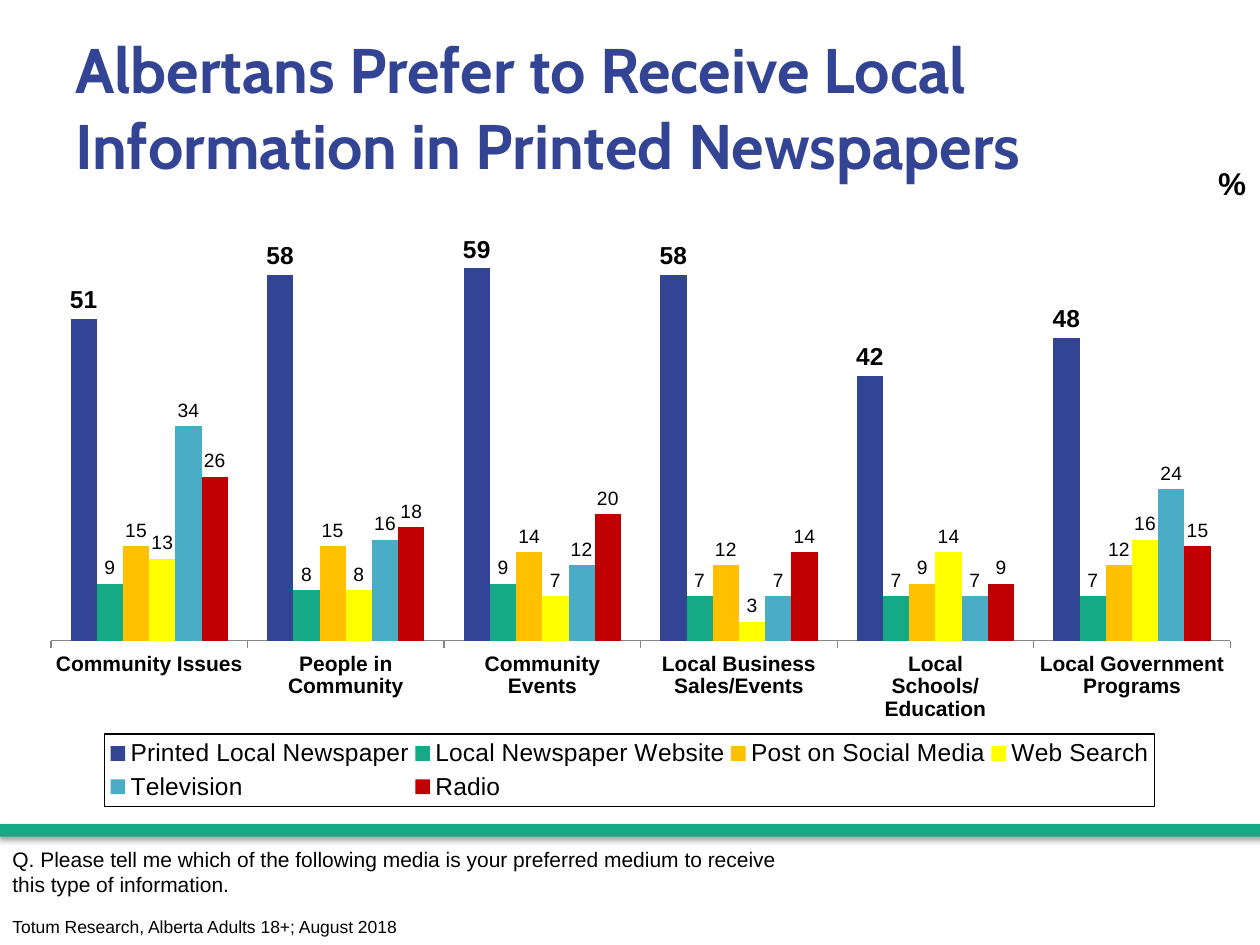
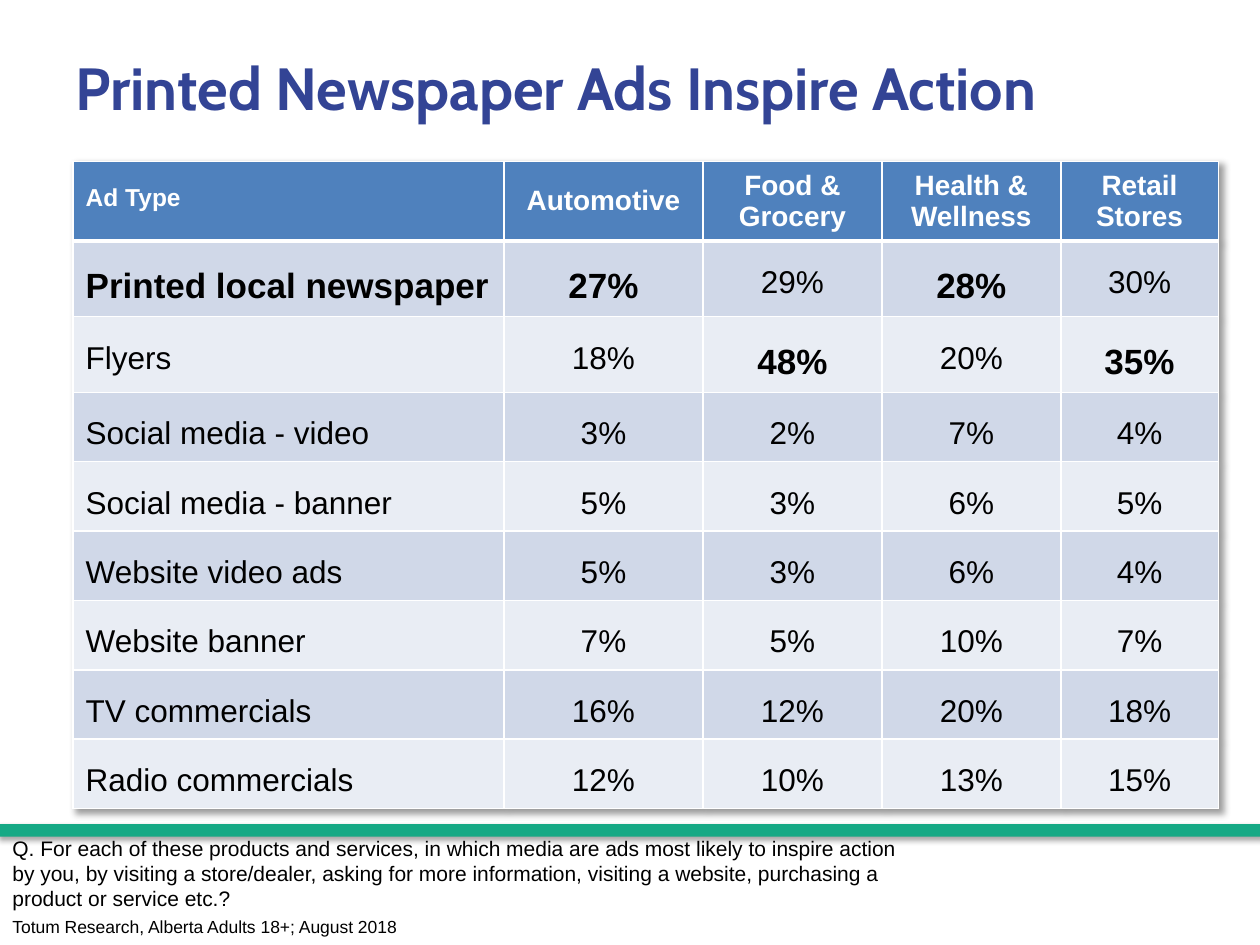
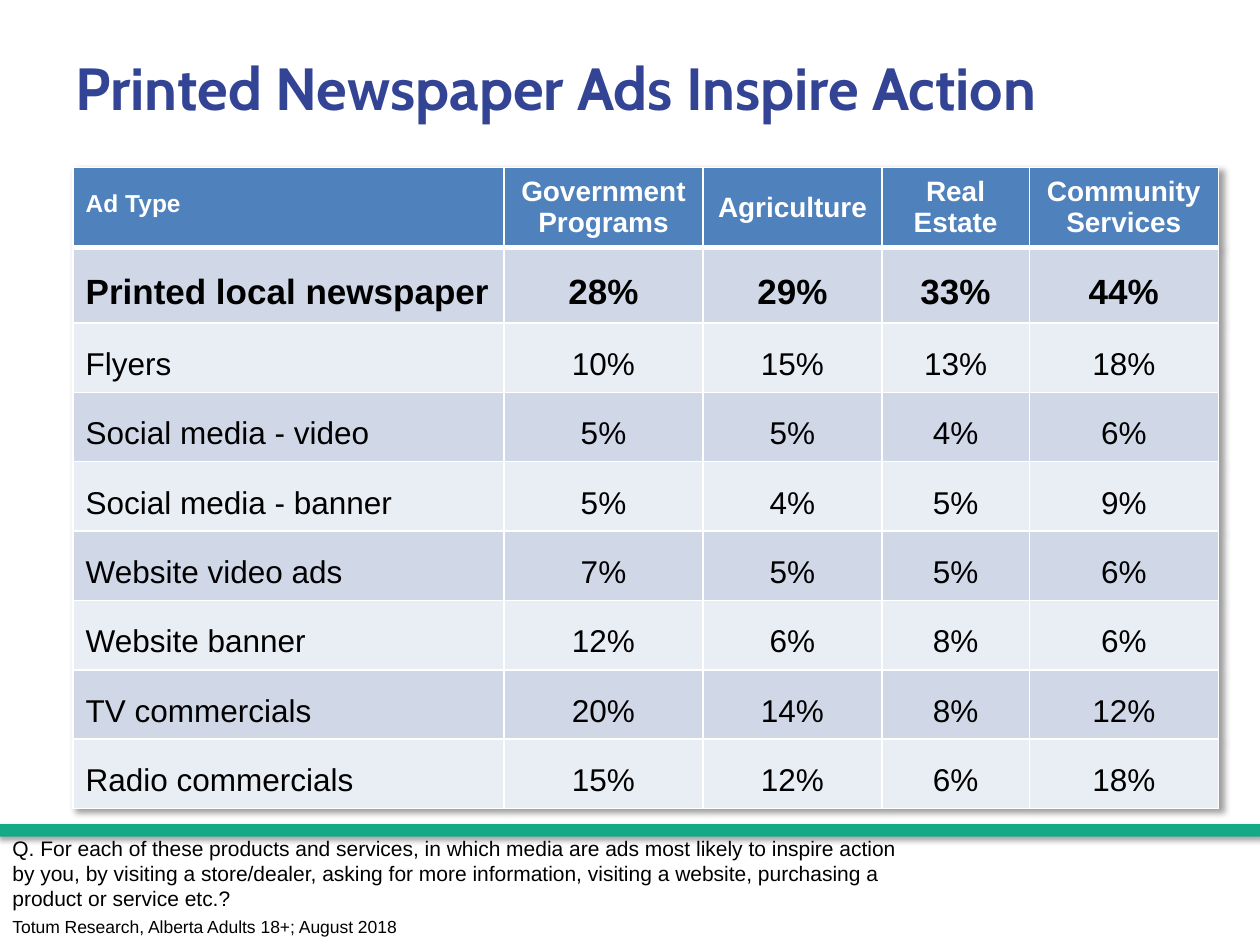
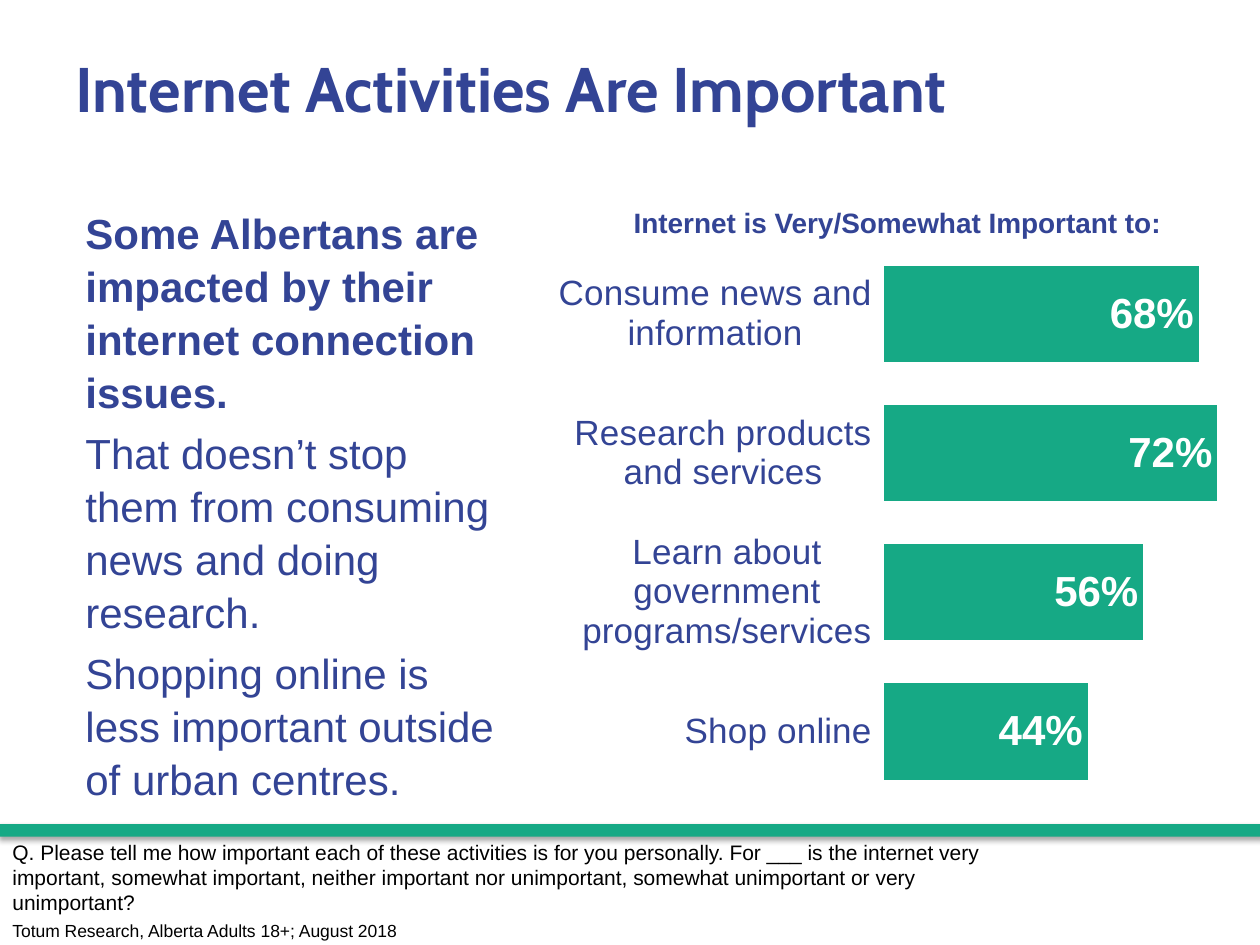
from dataclasses import dataclass

from pptx import Presentation
from pptx.chart.data import CategoryChartData
from pptx.dml.color import RGBColor
from pptx.enum.chart import XL_CHART_TYPE, XL_LABEL_POSITION, XL_LEGEND_POSITION, XL_TICK_MARK
from pptx.enum.shapes import MSO_SHAPE
from pptx.enum.text import MSO_ANCHOR, PP_ALIGN
from pptx.oxml import parse_xml
from pptx.oxml.ns import nsdecls, qn
from pptx.util import Inches, Pt


@dataclass(frozen=True)
class Theme:
    navy = RGBColor.from_string("334495")
    green = RGBColor.from_string("16A985")
    amber = RGBColor.from_string("FFC000")
    yellow = RGBColor.from_string("FFFF00")
    aqua = RGBColor.from_string("4BACC6")
    red = RGBColor.from_string("C00000")
    black = RGBColor.from_string("000000")
    white = RGBColor.from_string("FFFFFF")
    axis = RGBColor.from_string("868686")
    header = RGBColor.from_string("4F81BD")
    bands = (RGBColor.from_string("D0D8E8"), RGBColor.from_string("E9EDF4"))
    title_font = "Cabin"
    font = "Arial"
    question = 12
    source = 10
    cell = 18
    cell_top = 20
    cell_header = 16
    body = 24


T = Theme()

SHADOW = """<a:effectLst %s><a:outerShdw blurRad="{blur}" dist="{dist}" dir="{angle}" rotWithShape="0">
<a:srgbClr val="000000"><a:alpha val="{alpha}"/></a:srgbClr></a:outerShdw></a:effectLst>""" % nsdecls("a")
BORDER = """<a:{side} %s w="{width}"><a:solidFill><a:srgbClr val="FFFFFF"/></a:solidFill></a:{side}>""" % nsdecls("a")
LAYOUT = """<c:layout %s><c:manualLayout>{target}<c:xMode val="edge"/><c:yMode val="edge"/>
<c:x val="{x}"/><c:y val="{y}"/><c:w val="{w}"/><c:h val="{h}"/></c:manualLayout></c:layout>""" % nsdecls("c")
NO_FILL = "<c:spPr %s><a:noFill/><a:ln><a:noFill/></a:ln></c:spPr>" % nsdecls("c", "a")


def add_text(slide, box, lines, size, color=T.black, font=T.font, bold=False, wrap=True):
    tf = slide.shapes.add_textbox(*map(Inches, box)).text_frame
    tf.word_wrap = wrap
    tf.text = "\n".join(lines)
    for p in tf.paragraphs:
        for r in p.runs:
            r.font.size, r.font.name, r.font.bold = Pt(size), font, bold
            r.font.color.rgb = color
    return tf


def add_chart(slide, kind, box, data, inner, gap, top):
    """Add a chart with a hidden value axis from 0 to top; inner is the plot area as fractions."""
    chart = slide.shapes.add_chart(kind, *map(Inches, box), data).chart
    chart.has_title = chart.has_legend = False
    chart.font.size, chart.font.name = Pt(18), T.font
    chart.font.color.rgb = T.black
    chart._chartSpace.find(qn("c:chart")).addnext(parse_xml(NO_FILL))
    plot_area = chart._chartSpace.chart.plotArea
    for old in plot_area.findall(qn("c:layout")):
        plot_area.remove(old)
    x, y, w, h = inner
    target = '<c:layoutTarget val="inner"/>'
    plot_area.insert(0, parse_xml(LAYOUT.format(target=target, x=x, y=y, w=w, h=h)))
    chart.plots[0].gap_width = gap
    chart.plots[0].vary_by_categories = False
    chart.value_axis.minimum_scale, chart.value_axis.maximum_scale = 0, top
    chart.value_axis.has_major_gridlines = False
    chart.value_axis.visible = False
    chart.category_axis.major_tick_mark = XL_TICK_MARK.OUTSIDE
    return chart


prs = Presentation()
prs.slide_width, prs.slide_height = Inches(10), Inches(7.5)

# Title, band, question and source on every slide
ADS_QUESTION = ("Q. For each of these products and services, in which media are ads most likely to inspire "
                "action by you, by visiting a store/dealer, asking for more information, visiting a website, "
                "purchasing a product or service etc.?")
frames = [
    ("Albertans Prefer to Receive Local Information in Printed Newspapers", 36, (8.18, 1.21),
     "Q. Please tell me which of the following media is your preferred medium to receive this type of "
     "information.", (0, 6.67, 6.42, 0.5), 7.22),
    ("Printed Newspaper Ads Inspire Action", 34, (8.75, 0.9), ADS_QUESTION, (0, 6.58, 7.42, 0.71), 7.22),
    ("Printed Newspaper Ads Inspire Action", 34, (8.18, 0.9), ADS_QUESTION, (0, 6.58, 7.42, 0.71), 7.22),
    ("Internet Activities Are Important", 36, (8.18, 0.9),
     "Q. Please tell me how important each of these activities is for you personally. For ___ is the "
     "internet very important, somewhat important, neither important nor unimportant, somewhat "
     "unimportant or very unimportant?", (0, 6.61, 8.08, 0.71), 7.25),
]
slides = []
for title, title_size, title_extent, question, question_box, source_top in frames:
    s = prs.slides.add_slide(prs.slide_layouts[6])
    band = s.shapes.add_shape(MSO_SHAPE.RECTANGLE, 0, Inches(6.54), Inches(10.02), Inches(0.1))
    band.fill.solid()
    band.fill.fore_color.rgb = T.green
    band.line.fill.background()
    band._element.spPr.append(parse_xml(SHADOW.format(blur=Pt(3.1), dist=Pt(1.8), angle=5400000, alpha=35000)))
    tf = add_text(s, (0.5, 0.24, *title_extent), [title], title_size, T.navy, T.title_font, True)
    tf.vertical_anchor = MSO_ANCHOR.MIDDLE
    add_text(s, question_box, [question], T.question)
    add_text(s, (0, source_top, 4, 0.27), ["Totum Research, Alberta Adults 18+; August 2018"], T.source)
    slides.append(s)
media_slide, *ad_slides, internet_slide = slides

# Slide 1: preferred medium by type of information
media = [
    ("Printed Local Newspaper", T.navy, (51, 58, 59, 58, 42, 48)),
    ("Local Newspaper Website", T.green, (9, 8, 9, 7, 7, 7)),
    ("Post on Social Media", T.amber, (15, 15, 14, 12, 9, 12)),
    ("Web Search", T.yellow, (13, 8, 7, 3, 14, 16)),
    ("Television", T.aqua, (34, 16, 12, 7, 7, 24)),
    ("Radio", T.red, (26, 18, 20, 14, 9, 15)),
]
data = CategoryChartData()
data.categories = ["Community Issues", "People in Community", "Community Events",
                   "Local Business Sales/Events", "Local Schools/Education", "Local Government Programs"]
for name, color, values in media:
    data.add_series(name, values)
chart = add_chart(media_slide, XL_CHART_TYPE.COLUMN_CLUSTERED, (0.25, 1.21, 9.67, 5.21), data,
                  (0.016, 0.071, 0.968, 0.673), 150, 70)
chart.category_axis.tick_labels.font.size = Pt(12)
chart.category_axis.tick_labels.font.bold = True
chart.category_axis.format.line.color.rgb = T.axis
for i, (series, (name, color, values)) in enumerate(zip(chart.plots[0].series, media)):
    series.format.fill.solid()
    series.format.fill.fore_color.rgb = color
    labels = series.data_labels
    labels.show_value = True
    labels.position = XL_LABEL_POSITION.OUTSIDE_END
    labels.font.size = Pt(11 if i else 14)
    labels.font.bold = i == 0
chart.has_legend = True
legend = chart.legend
legend.position = XL_LEGEND_POSITION.BOTTOM
legend.include_in_layout = False
legend.font.size = Pt(14)
for old in legend._element.findall(qn("c:layout")):
    legend._element.remove(old)
legend._element.insert(1, parse_xml(LAYOUT.format(target="", x=0.06, y=0.886, w=0.862, h=0.11)))
legend._element.find(qn("c:overlay")).addnext(parse_xml(
    '<c:spPr %s><a:ln w="9525"><a:solidFill><a:srgbClr val="000000"/></a:solidFill></a:ln></c:spPr>'
    % nsdecls("c", "a")))
add_text(media_slide, (9.57, 1.25, 0.43, 0.4), ["%"], 18, bold=True, wrap=False)

# Slides 2 and 3: ads that inspire action; the highest share in each column stands out
ad_types = ["Printed local newspaper", "Flyers", "Social media - video", "Social media - banner",
            "Website video ads", "Website banner", "TV commercials", "Radio commercials"]
row_heights = [0.52, 0.39, 0.33, 0.33, 0.42, 0.41, 0.36, 0.33, 0.17]
ad_tables = [
    (1.28, 5.13, [3.42, 1.58, 1.42, 1.42, 1.25], {
        "Automotive": (27, 18, 3, 5, 5, 7, 16, 12),
        "Food & Grocery": (29, 48, 2, 3, 3, 5, 12, 10),
        "Health & Wellness": (28, 20, 7, 6, 6, 10, 20, 13),
        "Retail Stores": (30, 35, 4, 5, 4, 7, 18, 15)}),
    (1.33, 5.08, [3.42, 1.58, 1.42, 1.17, 1.5], {
        "Government Programs": (28, 10, 5, 5, 7, 12, 20, 15),
        "Agriculture": (29, 15, 5, 4, 5, 6, 14, 12),
        "Real Estate": (33, 13, 4, 5, 5, 8, 8, 6),
        "Community Services": (44, 18, 6, 9, 6, 6, 12, 18)}),
]
for s, (top, height, widths, shares) in zip(ad_slides, ad_tables):
    frame = s.shapes.add_table(len(row_heights), len(widths), Inches(0.58), Inches(top),
                               Inches(9.08), Inches(height))
    table = frame.table
    for column, width in zip(table.columns, widths):
        column.width = Inches(width)
    for row, row_height in zip(table.rows, row_heights):
        row.height = Inches(row_height)
    frame.width, frame.height = Inches(9.08), Inches(height)
    table._tbl.tblPr.insert(0, parse_xml(SHADOW.format(blur=Pt(4), dist=Pt(3), angle=2700000, alpha=40000)))
    columns = [["Ad Type", *ad_types]]
    columns += [[name, *(f"{v}%" for v in values)] for name, values in shares.items()]
    highest = [1] + [1 + values.index(max(values)) for values in shares.values()]
    for c, texts in enumerate(columns):
        for r, text in enumerate(texts):
            cell = table.cell(r, c)
            for side in ("lnL", "lnR", "lnT", "lnB"):
                width = Pt(3 if r == 0 and side == "lnB" else 1)
                cell._tc.get_or_add_tcPr().append(parse_xml(BORDER.format(side=side, width=width)))
            cell.fill.solid()
            cell.fill.fore_color.rgb = T.bands[(r - 1) % 2] if r else T.header
            cell.text = text
            p = cell.text_frame.paragraphs[0]
            p.alignment = PP_ALIGN.CENTER if c else PP_ALIGN.LEFT
            font = p.runs[0].font
            font.name = T.font
            font.color.rgb = T.black if r else T.white
            font.bold = r in (0, highest[c])
            if r:
                p.line_spacing = 1.5
                font.size = Pt(T.cell_top if r == highest[c] else T.cell)
            else:
                cell.vertical_anchor = MSO_ANCHOR.MIDDLE
                font.size = Pt(T.cell_header if c else 14)
    table.cell(0, 0).text_frame.paragraphs[0].line_spacing = Pt(12)

# Slide 4: importance of internet activities
tf = add_text(internet_slide, (0.58, 1.58, 3.5, 5.08), [
    "Some Albertans are impacted by their internet connection issues.",
    "That doesn’t stop them from consuming news and doing research.",
    "Shopping online is less important outside of urban centres."], T.body, T.navy)
tf.paragraphs[0].runs[0].font.bold = True
for i, p in enumerate(tf.paragraphs):
    p.line_spacing = 1.05
    p.space_before = Pt(4.8 if i else 0)

data = CategoryChartData(number_format="0%")
data.categories = ["Consume news and information", "Research products and services",
                   "Learn about government programs/services", "Shop online"]
data.add_series("Series 1", (0.68, 0.72, 0.56, 0.44))
chart = add_chart(internet_slide, XL_CHART_TYPE.BAR_CLUSTERED, (4.25, 1.58, 5.58, 4.86), data,
                  (0.496, 0.074, 0.474, 0.909), 44, 0.72)
chart.category_axis.reverse_order = True
chart.category_axis.format.line.fill.background()
chart.category_axis.tick_labels.font.size = Pt(20)
chart.category_axis.tick_labels.font.color.rgb = T.navy
series = chart.plots[0].series[0]
series.format.fill.solid()
series.format.fill.fore_color.rgb = T.green
labels = series.data_labels
labels.show_value = True
labels.number_format, labels.number_format_is_linked = "0%", False
labels.position = XL_LABEL_POSITION.INSIDE_END
labels.font.size, labels.font.bold = Pt(24), True
labels.font.color.rgb = T.white
add_text(internet_slide, (4.93, 1.58, 4.45, 0.37), ["Internet is Very/Somewhat Important to:"], 16,
         T.navy, bold=True, wrap=False)

prs.save("out.pptx")
